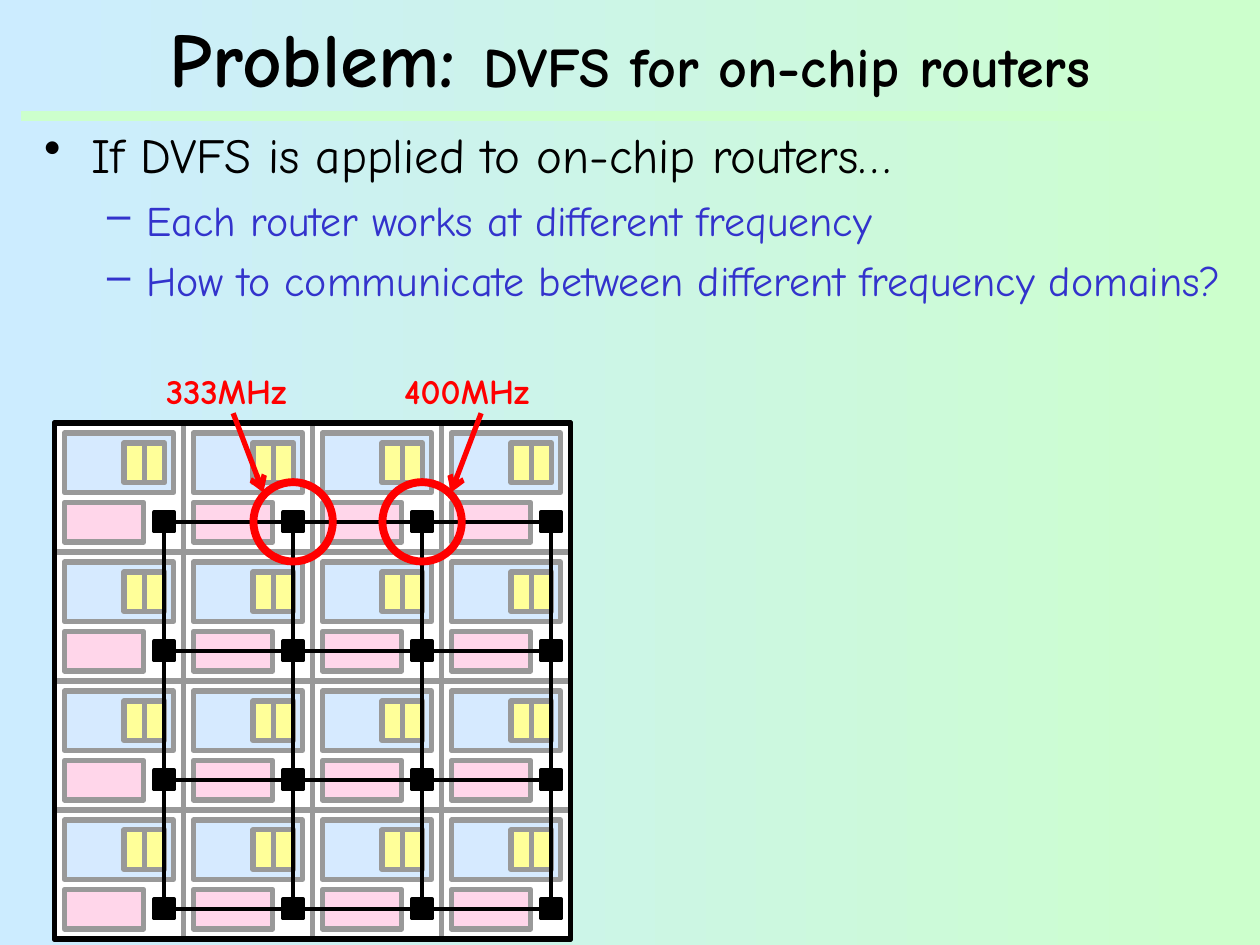
from lxml import etree
from pptx import Presentation, util as u
from pptx.dml.color import RGBColor
from pptx.enum import shapes, text
from pptx.oxml.ns import qn

# Content
TITLE = [("Problem: ", "title"), ("DVFS for on-chip routers", "subtitle")]
BULLETS = [
    (0, "If DVFS is applied to on-chip routers…"),
    (1, "Each router works at different frequency"),
    (1, "How to communicate between different frequency domains?"),
]
# Label, its left edge, router column, arrow start and arrow end (cm)
FREQUENCIES = [
    ("333MHz", 3.1, 1, (4.7, 8.33), (5.31, 9.93)),
    ("400MHz", 7.9, 2, (9.7, 8.33), (9.09, 9.93)),
]

THEME = {
    "font": "Comic Neue",
    "sizes": {"title": 44, "subtitle": 32, "label": 20},
    "background": ("CCECFF", "CCFFCC"),
    "rule": "CCFFCC", "ink": "000000", "paper": "FFFFFF", "accent": "FF0000",
    "core": "99CCFF", "cache": "FFFF00", "memory": "FF99CC",
}
# Per level: size, colour, bullet, left margin and hanging indent (cm)
LEVELS = [(28, "000000", "•", 0.95, 0.95), (24, "3333CC", "–", 2.06, 0.79)]

# Chip geometry in cm
GRID, PITCH = 4, 2.6
CHIP_LEFT, CHIP_TOP = 1.1, 8.53
ROUTER_X, ROUTER_Y, ROUTER_SIZE = 2.21, 1.99, 0.4
RING_SIZE = 1.6
TILE_PARTS = [
    ("paper", 0, 0, PITCH, PITCH),
    ("core", 0.2, 0.2, 2.2, 1.2),
    ("cache", 1.8, 0.4, 0.42, 0.8),
    ("memory", 0.2, 1.6, 1.6, 0.8),
    ("cache", 1.4, 0.4, 0.42, 0.8),
]


def color(value):
    return RGBColor.from_string(value)


def add_box(parent, kind, left, top, width, height, fill, line, weight):
    shape = parent.add_shape(kind, u.Cm(left), u.Cm(top), u.Cm(width), u.Cm(height))
    shape.shadow.inherit = False
    if fill:
        shape.fill.solid()
        shape.fill.fore_color.rgb = color(fill)
    else:
        shape.fill.background()
    shape.line.color.rgb = color(line)
    shape.line.width = u.Pt(weight)
    return shape


def add_line(parent, start, end, line, weight, arrow=False):
    connector = parent.add_connector(
        shapes.MSO_CONNECTOR.STRAIGHT, *(u.Cm(value) for value in (*start, *end)))
    connector.line.color.rgb = color(line)
    connector.line.width = u.Pt(weight)
    if arrow:
        etree.SubElement(connector.line._get_or_add_ln(), qn("a:tailEnd"), type="arrow")
    etree.SubElement(connector._element.spPr, qn("a:effectLst"))


def add_text_box(parent, left, top, width, height, wrap=True):
    box = parent.add_textbox(u.Cm(left), u.Cm(top), u.Cm(width), u.Cm(height))
    box.text_frame.word_wrap = wrap
    return box.text_frame


def add_run(paragraph, words, size, value, bold=False):
    run = paragraph.add_run()
    run.text = words
    run.font.name = THEME["font"]
    run.font.size = u.Pt(size)
    run.font.bold = bold
    run.font.color.rgb = color(value)


def set_bullet(paragraph, mark, margin, hanging):
    properties = paragraph._p.get_or_add_pPr()
    properties.set("marL", str(u.Cm(margin)))
    properties.set("indent", str(-u.Cm(hanging)))
    etree.SubElement(properties, qn("a:buChar"), char=mark)


def router_center(column, row):
    return (CHIP_LEFT + ROUTER_X + column * PITCH, CHIP_TOP + ROUTER_Y + row * PITCH)


def add_heading(slide):
    add_line(slide.shapes, (0.43, 2.34), (25.2, 2.34), THEME["rule"], 6)
    frame = add_text_box(slide.shapes, 0.64, 0.2, 24.13, 1.9)
    frame.vertical_anchor = text.MSO_ANCHOR.MIDDLE
    paragraph = frame.paragraphs[0]
    paragraph.alignment = text.PP_ALIGN.CENTER
    for words, role in TITLE:
        add_run(paragraph, words, THEME["sizes"][role], THEME["ink"], bold=True)


def add_bullets(slide):
    frame = add_text_box(slide.shapes, 0.64, 2.39, 24.36, 5.77)
    for index, (level, words) in enumerate(BULLETS):
        paragraph = frame.add_paragraph() if index else frame.paragraphs[0]
        size, value, mark, margin, hanging = LEVELS[level]
        paragraph.level = level
        paragraph.space_before = u.Pt(6)
        set_bullet(paragraph, mark, margin, hanging)
        add_run(paragraph, words, size, value)


def add_chip(slide):
    rectangle = shapes.MSO_SHAPE.RECTANGLE
    ink = THEME["ink"]
    cells = [(column, row) for column in range(GRID) for row in range(GRID)]

    # Tiles with their core, caches and memory
    for column, row in cells:
        for role, left, top, width, height in TILE_PARTS:
            add_box(slide.shapes, rectangle, CHIP_LEFT + column * PITCH + left,
                    CHIP_TOP + row * PITCH + top, width, height, THEME[role], ink, 3)

    # Translucent veil that fades the tiles
    side = GRID * PITCH
    veil = add_box(slide.shapes, rectangle, CHIP_LEFT, CHIP_TOP, side, side,
                   THEME["paper"], ink, 3)
    fill_color = veil._element.spPr.find(qn("a:solidFill"))[0]
    etree.SubElement(fill_color, qn("a:alpha"), val="60000")

    # Router mesh
    mesh = slide.shapes.add_group_shape().shapes
    for column, row in cells:
        x, y = router_center(column, row)
        add_box(mesh, rectangle, x - ROUTER_SIZE / 2, y - ROUTER_SIZE / 2,
                ROUTER_SIZE, ROUTER_SIZE, ink, ink, 2)
    last = GRID - 1
    for index in range(GRID):
        add_line(mesh, router_center(index, 0), router_center(index, last), ink, 2.25)
        add_line(mesh, router_center(0, index), router_center(last, index), ink, 2.25)


def add_frequencies(slide):
    accent = THEME["accent"]
    for words, left, column, start, end in FREQUENCIES:
        x, y = router_center(column, 0)
        add_box(slide.shapes, shapes.MSO_SHAPE.OVAL, x - RING_SIZE / 2, y - RING_SIZE / 2,
                RING_SIZE, RING_SIZE, None, accent, 4.5)
        frame = add_text_box(slide.shapes, left, 7.32, 3.4, 0.99, wrap=False)
        add_run(frame.paragraphs[0], words, THEME["sizes"]["label"], accent, bold=True)
        add_line(slide.shapes, start, end, accent, 3, arrow=True)


def main():
    presentation = Presentation()
    presentation.slide_width, presentation.slide_height = u.Cm(25.4), u.Cm(19.05)
    slide = presentation.slides.add_slide(presentation.slide_layouts[6])

    # Background gradient, left to right
    fill = slide.background.fill
    fill.gradient()
    fill.gradient_angle = 0
    for stop, value in zip(fill.gradient_stops, THEME["background"]):
        stop.color.rgb = color(value)

    add_heading(slide)
    add_bullets(slide)
    add_chip(slide)
    add_frequencies(slide)
    presentation.save("out.pptx")


if __name__ == "__main__":
    main()
